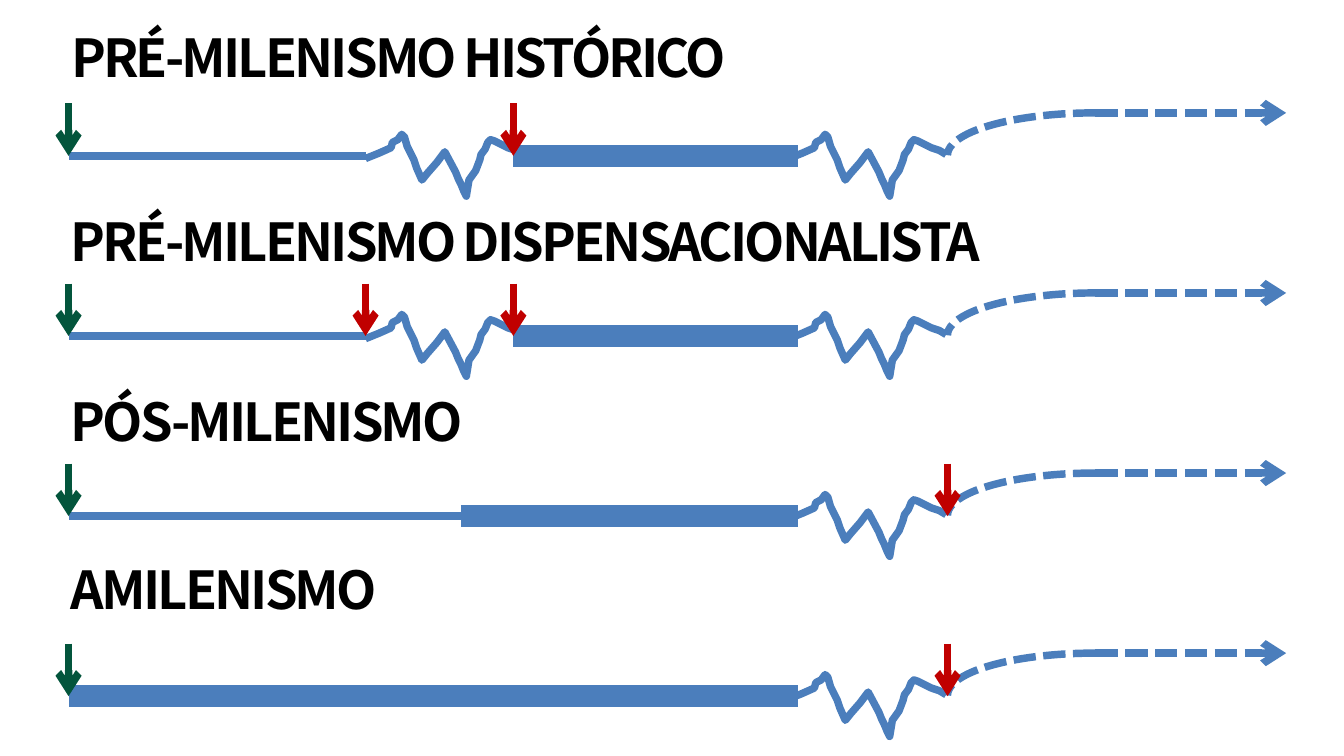
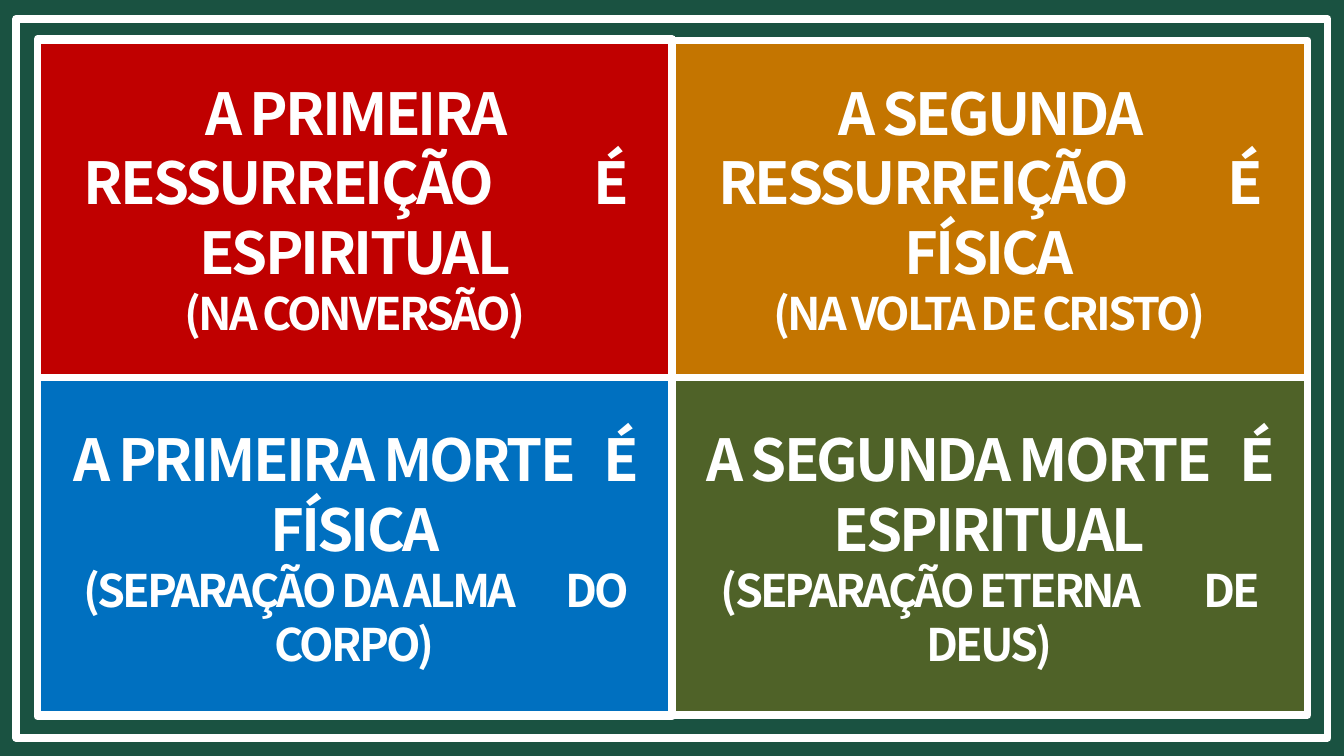
import lxml.etree
import pptx
import pptx.dml.color
import pptx.enum.dml
import pptx.enum.shapes
import pptx.enum.text
import pptx.oxml.ns
import pptx.util

Inches = pptx.util.Inches
Pt = pptx.util.Pt
kind = pptx.enum.shapes.MSO_SHAPE
align = pptx.enum.text.PP_ALIGN
hue = pptx.dml.color.RGBColor.from_string
qn = pptx.oxml.ns.qn

BLUE, GREEN, RED, WHITE, BLACK = "4B7EBC", "03553C", "C00000", "FFFFFF", "000000"
FONT = "Noto Sans CJK KR"


def draw(shape, color, width=4, dash=False, arrow=False):
    line = shape.line
    line.color.rgb = hue(color)
    line.width = Pt(width)
    if dash:
        line.dash_style = pptx.enum.dml.MSO_LINE.SQUARE_DOT
    props = shape._element.spPr
    if arrow:
        lxml.etree.SubElement(props.find(qn("a:ln")), qn("a:tailEnd"), type="arrow")
    lxml.etree.SubElement(props, qn("a:effectLst"))


def style(run, size, color, space=-1.5):
    run.font.name = FONT
    run.font.size = Pt(size)
    run.font.bold = True
    run.font.color.rgb = hue(color)
    run._r.get_or_add_rPr().set("spc", str(round(space * 100)))


deck = pptx.Presentation()
deck.slide_width = Inches(10)
deck.slide_height = deck.slide_width * 9 // 16

slide = deck.slides.add_slide(deck.slide_layouts[5])
shapes = slide.shapes
left, turn, reign, crisis, end = 0.51, 2.72, 3.82, 5.87, 7.05
first, step = 1.16, 1.34

views = [
    ("PRÉ-MILENISMO HISTÓRICO", 0, 0.84, turn, reign, [turn, crisis], [reign]),
    ("PRÉ-MILENISMO DISPENSACIONALISTA", 1.24, 1.1, turn, reign, [turn, crisis], [turn, reign]),
    ("PÓS-MILENISMO", 2.58, 1.1, 3.58, 3.43, [crisis], [end]),
    ("AMILENISMO", 3.91, 0.94, left, left, [crisis], [end]),
]
wave = [
    (0, 2), (10, -2), (19, -6), (20, -10), (24, -12), (27, -16), (29, -14),
    (31, -7), (36, 3), (38, 9), (42, 18), (46, 13), (53, 5), (59, -3),
    (67, 12), (69, 17), (71, 21), (73, 26), (75, 30), (77, 18), (82, 11),
    (85, 3), (86, -1), (89, -5), (91, -10), (93, -12), (96, -11),
    (100, -9), (106, -6), (112, -4), (117, -1),
]

for row, (name, top, height, thin, thick, waves, comings) in enumerate(views):
    y = first + row * step
    spot = Inches(0.43), Inches(top), Inches(9.57), Inches(height)
    if row == 0:
        box = shapes.title
        box.left, box.top, box.width, box.height = spot
    else:
        box = shapes.add_textbox(*spot)
    frame = box.text_frame
    frame.text = name
    frame.word_wrap = True
    frame.auto_size = pptx.enum.text.MSO_AUTO_SIZE.NONE
    frame.vertical_anchor = pptx.enum.text.MSO_ANCHOR.MIDDLE
    frame.paragraphs[0].alignment = align.LEFT
    style(frame.paragraphs[0].runs[0], 28, BLACK)

    lines = [(thick, y, 5.94, y, BLUE, 12, False, False)]
    if thin > left:
        lines.append((left, y, thin, y, BLUE, 4, False, False))
    lines.append((8.15, y - 0.32, 9.57, y - 0.32, BLUE, 4, True, True))
    for x, color in [(left, GREEN)] + [(x, RED) for x in comings]:
        lines.append((x, y - 0.39, x, y, color, 4, False, True))

    for x in waves:
        path = shapes.build_freeform(*wave[0], scale=Inches(0.01))
        path.add_line_segments(wave[1:], close=False)
        curve = path.convert_to_shape(Inches(x), Inches(y))
        curve.fill.background()
        draw(curve, BLUE)

    arc = shapes.add_shape(kind.ARC, Inches(end), Inches(y - 0.32), Inches(2.2), Inches(0.63))
    arc._element.spPr.xfrm.set("flipH", "1")
    arc.fill.background()
    draw(arc, BLUE, dash=True)

    for x1, y1, x2, y2, color, width, dash, arrow in lines:
        line = shapes.add_connector(
            pptx.enum.shapes.MSO_CONNECTOR.STRAIGHT,
            Inches(x1), Inches(y1), Inches(x2), Inches(y2))
        draw(line, color, width, dash, arrow)

slide = deck.slides.add_slide(deck.slide_layouts[6])
shapes = slide.shapes
x, y, wide, high = 0.28, 0.29, 4.72, 2.52

back = shapes.add_shape(kind.RECTANGLE, 0, 0, deck.slide_width, deck.slide_height)
back.shadow.inherit = False
back.line.fill.background()
back.fill.solid()
back.fill.fore_color.rgb = hue("02402D")
tint = back._element.spPr.find(qn("a:solidFill"))[0]
lxml.etree.SubElement(tint, qn("a:alpha"), val="90000")

cells = [
    (RED, [("A PRIMEIRA RESSURREIÇÃO", 46, "É ESPIRITUAL")], [("(NA CONVERSÃO)", 0, "")]),
    ("C47500", [("A SEGUNDA RESSURREIÇÃO", 46, "É FÍSICA")], [("(NA VOLTA DE CRISTO)", 0, "")]),
    ("0070C0", [("A PRIMEIRA MORTE", 8, "É FÍSICA")], [("(SEPARAÇÃO DA ALMA", 21, "DO CORPO)")]),
    ("4F6228", [("A SEGUNDA MORTE", 8, "É ESPIRITUAL")], [("(SEPARAÇÃO ETERNA", 28, "DE DEUS)")]),
]
for n, (color, main, note) in enumerate(cells):
    cell = shapes.add_shape(
        kind.RECTANGLE, Inches(x + n % 2 * wide), Inches(y + n // 2 * high),
        Inches(wide), Inches(high))
    cell.shadow.inherit = False
    cell.line.fill.background()
    cell.fill.solid()
    cell.fill.fore_color.rgb = hue(color)
    frame = cell.text_frame
    frame.word_wrap = True
    frame.vertical_anchor = pptx.enum.text.MSO_ANCHOR.MIDDLE
    for size, (start, gap, rest) in zip((31, 24), main + note):
        para = frame.paragraphs[0] if size == 31 else frame.add_paragraph()
        para.alignment = align.CENTER
        para.text = start
        style(para.runs[0], size, WHITE)
        if rest:
            for text, space in ((" ", gap), (rest, -1.5)):
                run = para.add_run()
                run.text = text
                style(run, size, WHITE, space)

rims = [
    (0.12, 0.14, 9.76, 5.35),
    (x, y, wide, 2 * high),
    (x, y + high, 9.45, 2.51),
    (x, 0.3, 9.45, 2.51),
]
for rim in rims:
    edge = shapes.add_shape(kind.RECTANGLE, *[Inches(side) for side in rim])
    edge.fill.background()
    draw(edge, WHITE)

deck.save("out.pptx")
